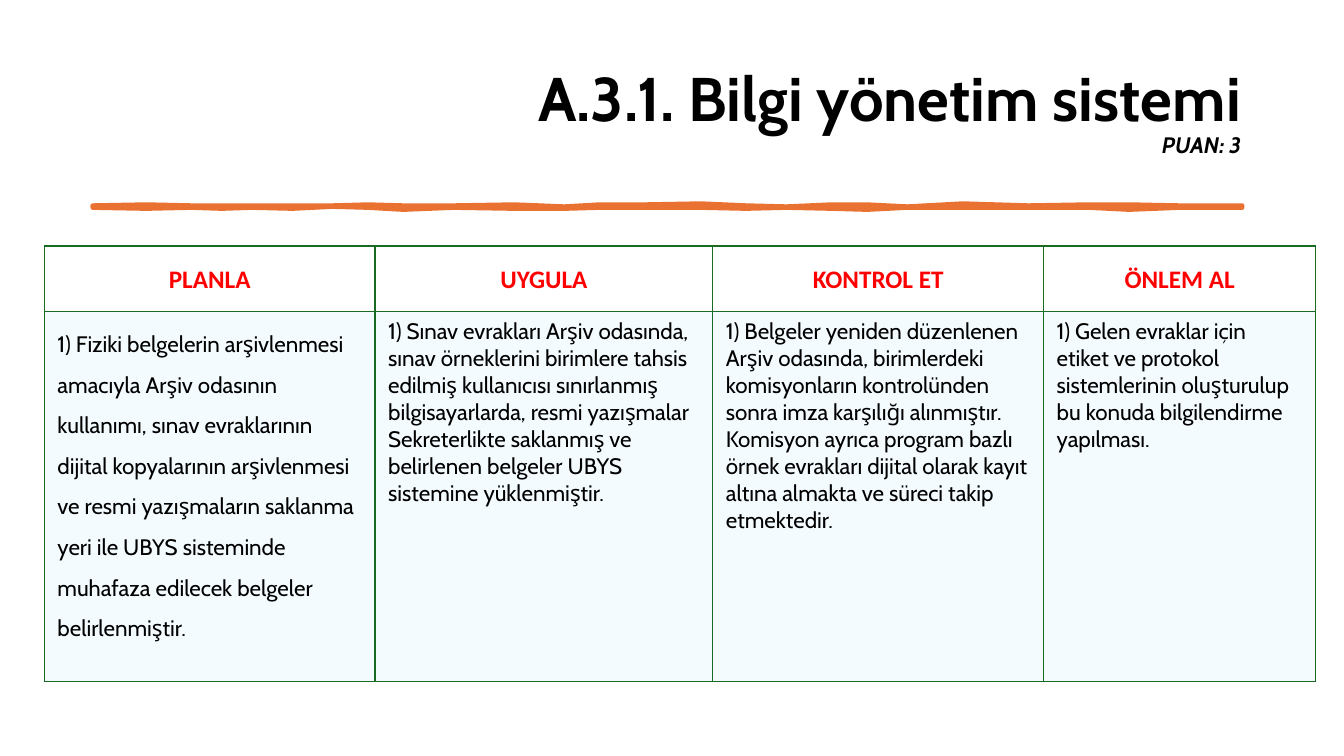
from lxml.etree import SubElement
from pptx import Presentation
from pptx.dml.color import RGBColor
from pptx.enum.text import MSO_ANCHOR, PP_ALIGN
from pptx.oxml import parse_xml
from pptx.oxml.ns import nsdecls, qn
from pptx.util import Inches, Pt

BLACK = RGBColor(0x00, 0x00, 0x00)
WHITE = RGBColor(0xFF, 0xFF, 0xFF)
RED = RGBColor(0xFF, 0x00, 0x00)
ORANGE = RGBColor(0xE9, 0x71, 0x32)
GREEN = RGBColor(0x19, 0x6B, 0x24)
PALE_BLUE = RGBColor(0xCA, 0xEE, 0xFB)

# Slide grid, in inches
WIDTH, HEIGHT = 13.33, 7.5
MARGIN = 0.92
CONTENT_WIDTH = WIDTH - 2 * MARGIN
COLUMNS = [3.28, 3.35, 3.28, 2.7]
ROWS = [0.65, 3.67]

# Heading, text and line spacing of each column
STEPS = [
    ("PLANLA",
     "1) Fiziki belgelerin arşivlenmesi amacıyla Arşiv odasının kullanımı, "
     "sınav evraklarının dijital kopyalarının arşivlenmesi ve resmi "
     "yazışmaların saklanma yeri ile UBYS sisteminde muhafaza edilecek "
     "belgeler belirlenmiştir.", 1.5),
    ("UYGULA",
     "1) Sınav evrakları Arşiv odasında, sınav örneklerini birimlere tahsis "
     "edilmiş kullanıcısı sınırlanmış bilgisayarlarda, resmi yazışmalar "
     "Sekreterlikte saklanmış ve belirlenen belgeler UBYS sistemine "
     "yüklenmiştir.", 1.0),
    ("KONTROL ET",
     "1) Belgeler yeniden düzenlenen Arşiv odasında, birimlerdeki "
     "komisyonların kontrolünden sonra imza karşılığı alınmıştır. Komisyon "
     "ayrıca program bazlı örnek evrakları dijital olarak kayıt altına "
     "almakta ve süreci takip etmektedir.", 1.0),
    ("ÖNLEM AL",
     "1) Gelen evraklar için etiket ve protokol sistemlerinin oluşturulup "
     "bu konuda bilgilendirme yapılması.", 1.0),
]

# Brush stroke edges in hundredths of an inch: x, top and bottom
STROKE = [
    (92, 204, 206), (145, 203, 207), (190, 204, 206),
    (220, 204, 207), (250, 204, 206), (290, 204, 207),
    (330, 204, 205), (365, 203, 206), (400, 204, 208),
    (450, 204, 206), (510, 203, 207), (560, 205, 207),
    (595, 203, 206), (640, 203, 206), (695, 202, 206),
    (740, 204, 207), (780, 205, 206), (825, 203, 207),
    (860, 203, 208), (900, 205, 206), (955, 202, 206),
    (1020, 204, 206), (1080, 203, 206), (1120, 203, 208),
    (1170, 204, 206), (1232, 204, 206),
]


def add_span(para, text, size, font="Cabin", color=BLACK, bold=False, italic=False):
    span = para.add_run()
    span.text = text
    span.font.name = font
    span.font.size = Pt(size)
    span.font.color.rgb = color
    span.font.bold = bold
    span.font.italic = italic


def add_title(page):
    box = page.shapes.add_textbox(Inches(MARGIN), Inches(0.4),
                                  Inches(CONTENT_WIDTH), Inches(1.45))
    frame = box.text_frame
    frame.word_wrap = True
    frame.vertical_anchor = MSO_ANCHOR.MIDDLE
    para = frame.paragraphs[0]
    para.alignment = PP_ALIGN.RIGHT
    para.line_spacing = 0.9
    add_span(para, "A.3.1. Bilgi yönetim sistemi", 44, bold=True)
    para.add_line_break()
    add_span(para, "PUAN: 3", 16, bold=True, italic=True)


def add_stroke(page):
    top = [(x, upper) for x, upper, lower in STROKE]
    bottom = [(x, lower) for x, upper, lower in reversed(STROKE)]
    builder = page.shapes.build_freeform(*top[0], scale=Inches(0.01))
    builder.add_line_segments(top[1:] + bottom, close=True)
    stroke = builder.convert_to_shape()
    stroke.shadow.inherit = False
    stroke.fill.solid()
    stroke.fill.fore_color.rgb = ORANGE
    stroke.line.color.rgb = ORANGE
    stroke.line.width = Pt(3.25)
    # Round joins keep the stroke ends soft
    SubElement(stroke.element.spPr.find(qn("a:ln")), qn("a:round"))


def style_cell(cell, fill, margins, opacity=100):
    cell.margin_left = cell.margin_right = Inches(margins[0])
    cell.margin_top = cell.margin_bottom = Inches(margins[1])
    cell.fill.solid()
    cell.fill.fore_color.rgb = fill
    properties = cell._tc.get_or_add_tcPr()
    if opacity < 100:
        color = properties.find(".//" + qn("a:srgbClr"))
        SubElement(color, qn("a:alpha")).set("val", str(opacity * 1000))
    # Borders come before the fill
    for index, side in enumerate("LRTB"):
        properties.insert(index, parse_xml(
            f'<a:ln{side} {nsdecls("a")} w="{Pt(1)}"><a:solidFill>'
            f'<a:srgbClr val="{GREEN}"/></a:solidFill></a:ln{side}>'))


def add_heading(cell, text):
    style_cell(cell, WHITE, (0.05, 0))
    cell.vertical_anchor = MSO_ANCHOR.MIDDLE
    para = cell.text_frame.paragraphs[0]
    para.alignment = PP_ALIGN.CENTER
    para.line_spacing = 1.07
    para.space_after = Pt(8)
    add_span(para, text, 18, font="Calibri", color=RED, bold=True)


def add_body(cell, text, spacing):
    style_cell(cell, PALE_BLUE, (0.13, 0.06), opacity=20)
    para = cell.text_frame.paragraphs[0]
    para.line_spacing = spacing
    add_span(para, text, 16)


def add_steps_table(page):
    table = page.shapes.add_table(
        len(ROWS), len(COLUMNS), Inches(0.44), Inches(2.44),
        Inches(sum(COLUMNS)), Inches(sum(ROWS))).table
    table.first_row = table.horz_banding = False
    for column, width in zip(table.columns, COLUMNS):
        column.width = Inches(width)
    for row, height in zip(table.rows, ROWS):
        row.height = Inches(height)
    for index, (heading, text, spacing) in enumerate(STEPS):
        add_heading(table.cell(0, index), heading)
        add_body(table.cell(1, index), text, spacing)


def main():
    deck = Presentation()
    deck.slide_width = Inches(WIDTH)
    deck.slide_height = Inches(HEIGHT)
    page = deck.slides.add_slide(deck.slide_layouts[6])
    add_title(page)
    add_stroke(page)
    add_steps_table(page)
    deck.save("out.pptx")


if __name__ == "__main__":
    main()
